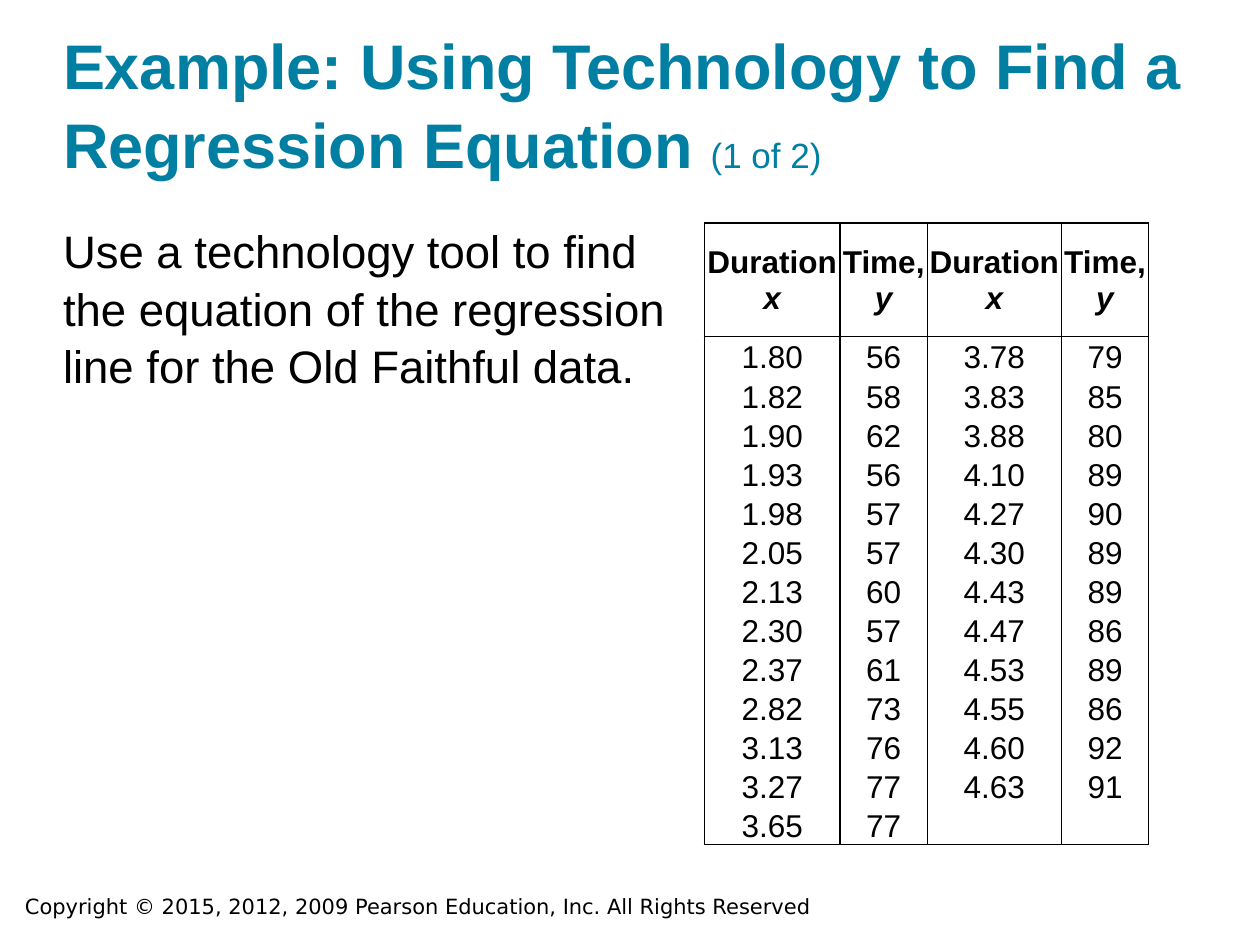
from dataclasses import dataclass

from lxml import etree
from pptx import Presentation
from pptx.dml.color import RGBColor
from pptx.enum import text
from pptx.oxml import ns
from pptx.util import Pt


@dataclass(frozen=True)
class Theme:
    accent: RGBColor = RGBColor(0x00, 0x7F, 0xA3)
    ink: RGBColor = RGBColor(0, 0, 0)
    paper: RGBColor = RGBColor(255, 255, 255)
    font: str = "Arial"
    footer_font: str = "DejaVu Sans"
    title_size: int = 36
    counter_size: int = 20
    body_size: int = 26
    table_size: int = 18
    footer_size: int = 12
    line_spacing: float = 1.05


THEME = Theme()

DURATIONS_AND_TIMES = [
    ("1.80", "56", "3.78", "79"),
    ("1.82", "58", "3.83", "85"),
    ("1.90", "62", "3.88", "80"),
    ("1.93", "56", "4.10", "89"),
    ("1.98", "57", "4.27", "90"),
    ("2.05", "57", "4.30", "89"),
    ("2.13", "60", "4.43", "89"),
    ("2.30", "57", "4.47", "86"),
    ("2.37", "61", "4.53", "89"),
    ("2.82", "73", "4.55", "86"),
    ("3.13", "76", "4.60", "92"),
    ("3.27", "77", "4.63", "91"),
    ("3.65", "77", "", ""),
]
HEADINGS = [("Duration", "x"), ("Time,", "y")] * 2
COLUMN_WIDTHS = [77.5, 50, 76.5, 50]
HEADER_HEIGHT, ROW_HEIGHT = 64.8, 21.6


def add_run(paragraph, wording, size, color=THEME.ink, font=THEME.font,
            bold=False, italic=False):
    run = paragraph.add_run()
    run.text = wording
    run.font.size, run.font.name = Pt(size), font
    run.font.bold, run.font.italic = bold, italic
    run.font.color.rgb = color


def prepare_placeholder(placeholder, left, top, width, height, anchor):
    """Move a placeholder, clear its insets and return its first paragraph."""
    placeholder.left, placeholder.top = Pt(left), Pt(top)
    placeholder.width, placeholder.height = Pt(width), Pt(height)
    frame = placeholder.text_frame
    frame.margin_left = frame.margin_right = 0
    frame.margin_top = frame.margin_bottom = 0
    frame.word_wrap = True
    frame.auto_size = text.MSO_AUTO_SIZE.NONE
    frame.vertical_anchor = anchor
    paragraph = frame.paragraphs[0]
    paragraph.alignment = text.PP_ALIGN.LEFT
    paragraph.line_spacing = THEME.line_spacing
    paragraph.space_before = Pt(0)
    return paragraph


def add_title(slide):
    title = prepare_placeholder(slide.shapes.title, 36, 17.28, 648, 86.4,
                                text.MSO_ANCHOR.BOTTOM)
    add_run(title, "Example: Using Technology to Find a Regression Equation ",
            THEME.title_size, THEME.accent, bold=True)
    add_run(title, "(1 of 2)", THEME.counter_size, THEME.accent)


def add_task(slide):
    task = prepare_placeholder(slide.placeholders[1], 36, 126, 347.76, 365.76,
                               text.MSO_ANCHOR.TOP)
    properties = task._p.get_or_add_pPr()
    properties.set("marL", "0")
    properties.set("indent", "0")
    etree.SubElement(properties, ns.qn("a:buNone"))
    add_run(task, "Use a technology tool to find the equation of the "
                  "regression line for the Old Faithful data.", THEME.body_size)


def set_borders(cell, sides):
    """Rule the given sides (letters of LRTB) and clear the others."""
    properties = cell._tc.get_or_add_tcPr()
    for side in "LRTB":
        line = etree.SubElement(properties, ns.qn(f"a:ln{side}"), w=str(Pt(1)))
        if side in sides:
            fill = etree.SubElement(line, ns.qn("a:solidFill"))
            etree.SubElement(fill, ns.qn("a:srgbClr"), val=str(THEME.ink))
        else:
            etree.SubElement(line, ns.qn("a:noFill"))


def format_cell(cell, sides, anchor):
    """Set borders, insets and alignment; return the cell's paragraph."""
    set_borders(cell, sides)
    cell.margin_left = cell.margin_right = cell.margin_top = Pt(0.72)
    cell.margin_bottom = 0
    cell.vertical_anchor = anchor
    paragraph = cell.text_frame.paragraphs[0]
    paragraph.alignment = text.PP_ALIGN.CENTER
    return paragraph


def add_data_table(slide):
    row_count = len(DURATIONS_AND_TIMES)
    table = slide.shapes.add_table(
        row_count + 1, len(HEADINGS), Pt(402.5), Pt(127.5),
        Pt(sum(COLUMN_WIDTHS)), Pt(HEADER_HEIGHT + row_count * ROW_HEIGHT)).table
    table.first_row = table.horz_banding = False
    for column, width in zip(table.columns, COLUMN_WIDTHS):
        column.width = Pt(width)
    for row in table.rows:
        row.height = Pt(ROW_HEIGHT)
    table.rows[0].height = Pt(HEADER_HEIGHT)

    for column, (label, symbol) in enumerate(HEADINGS):
        cell = table.cell(0, column)
        heading = format_cell(cell, "LRTB", text.MSO_ANCHOR.MIDDLE)
        cell.fill.solid()
        cell.fill.fore_color.rgb = THEME.paper
        add_run(heading, label, THEME.table_size, bold=True)
        heading.add_line_break()
        add_run(heading, symbol, THEME.table_size, bold=True, italic=True)

    for row, values in enumerate(DURATIONS_AND_TIMES, start=1):
        sides = "LR" + "T" * (row == 1) + "B" * (row == row_count)
        for column, value in enumerate(values):
            cell = table.cell(row, column)
            entry = format_cell(cell, sides, text.MSO_ANCHOR.BOTTOM)
            cell.fill.background()
            if value:
                add_run(entry, value, THEME.table_size)


def add_copyright(slide):
    box = slide.shapes.add_textbox(Pt(7.2), Pt(506.88), Pt(563.76), Pt(21.6))
    box.text_frame.word_wrap = True
    add_run(box.text_frame.paragraphs[0],
            "Copyright © 2015, 2012, 2009 Pearson Education, Inc. "
            "All Rights Reserved", THEME.footer_size, font=THEME.footer_font)


def main():
    deck = Presentation()
    deck.slide_width, deck.slide_height = Pt(720), Pt(540)
    slide = deck.slides.add_slide(deck.slide_layouts[1])
    add_copyright(slide)
    add_title(slide)
    add_task(slide)
    add_data_table(slide)
    deck.save("out.pptx")


if __name__ == "__main__":
    main()
